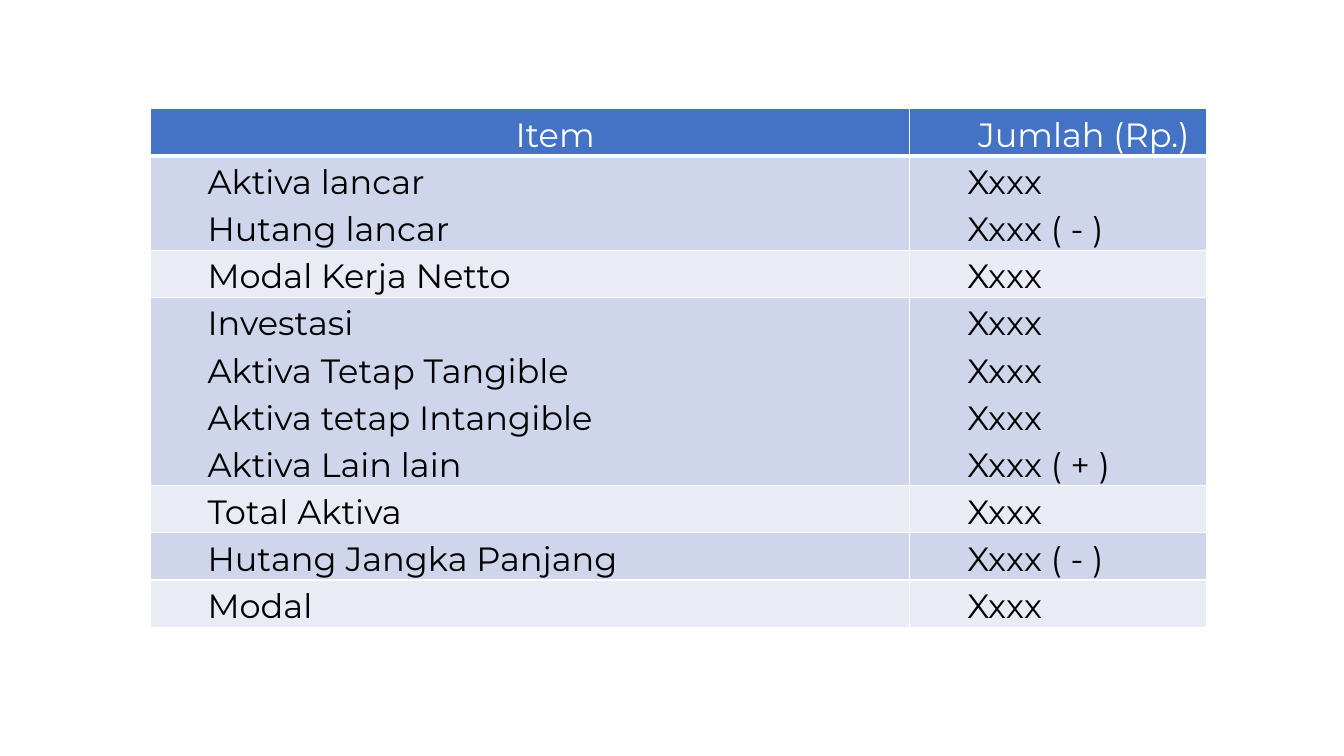
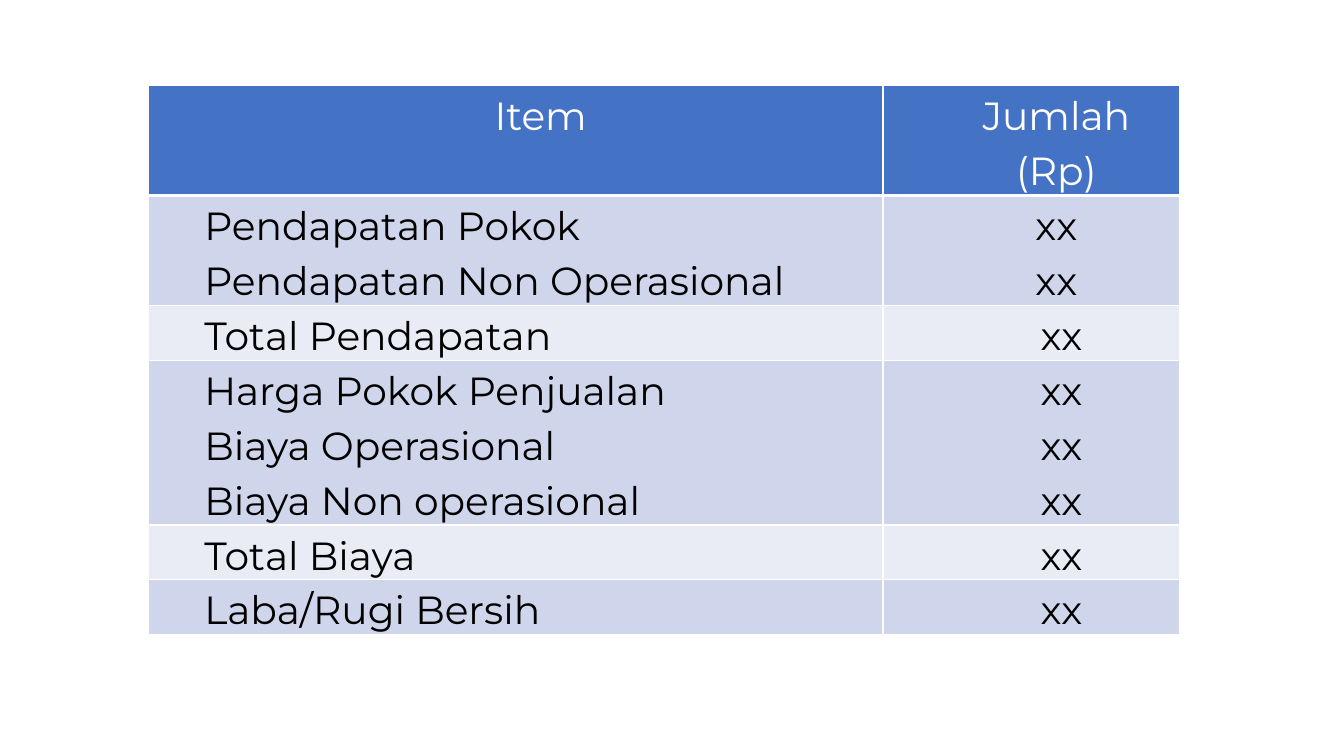
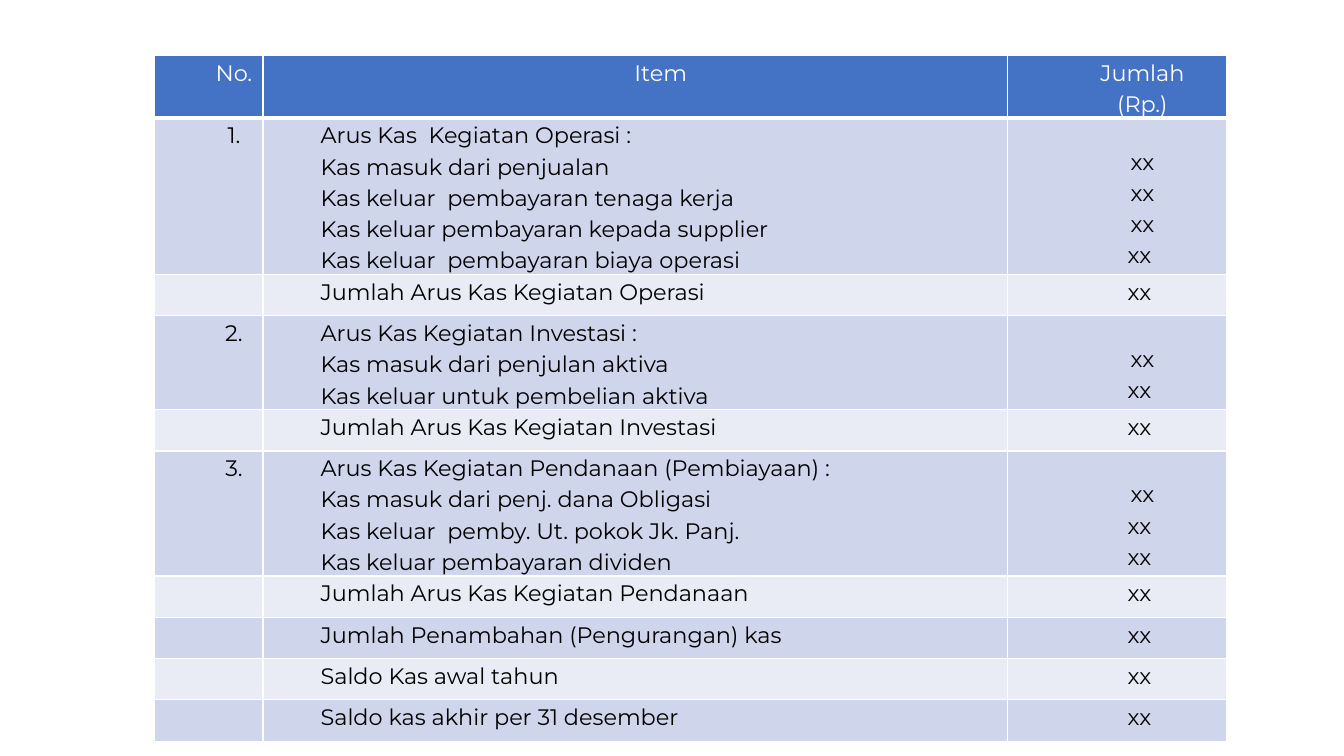
from dataclasses import dataclass

from lxml.etree import SubElement
from pptx import Presentation
from pptx.dml.color import RGBColor
from pptx.enum.text import PP_ALIGN
from pptx.oxml.ns import qn
from pptx.presentation import Presentation as Deck
from pptx.table import _Cell
from pptx.util import Cm, Pt

COLORS = {
    "header": "4472C4",
    "odd": "CFD5EA",
    "even": "E9EBF5",
    "border": "FFFFFF",
    "header_text": "FFFFFF",
    "text": "000000",
}
FONT = "Montserrat"
ROW_HEIGHT = 1.04
INDENT = 1.27
HEADING_LINE = 0.66
CENTER, JUSTIFY = PP_ALIGN.CENTER, PP_ALIGN.JUSTIFY


@dataclass(frozen=True)
class Statement:
    """One financial statement; lengths are in centimetres, lines in a cell are split by newlines."""
    left: float
    top: float
    widths: tuple[float, ...]
    aligns: tuple[PP_ALIGN, ...]
    size: int
    inset: float
    rows: tuple[tuple[str, ...], ...]


STATEMENTS = (
    Statement(3.78, 2.74, (19.15, 7.49), (JUSTIFY, JUSTIFY), 24, 0.18, (
        ("Item", "Jumlah (Rp.)"),
        ("Aktiva lancar\nHutang lancar", "Xxxx\nXxxx ( - )"),
        ("Modal Kerja Netto", "Xxxx"),
        ("Investasi\nAktiva Tetap Tangible\nAktiva tetap Intangible\nAktiva Lain lain",
         "Xxxx\nXxxx\nXxxx\nXxxx ( + )"),
        ("Total Aktiva", "Xxxx"),
        ("Hutang Jangka Panjang", "Xxxx ( - )"),
        ("Modal", "Xxxx"),
    )),
    Statement(3.73, 2.16, (18.52, 7.47), (JUSTIFY, CENTER), 28, 0.15, (
        ("Item", "Jumlah (Rp)"),
        ("Pendapatan Pokok\nPendapatan Non Operasional", "xx\nxx"),
        ("Total Pendapatan", " xx"),
        ("Harga Pokok Penjualan\nBiaya Operasional\nBiaya Non operasional", " xx\n xx\n xx"),
        ("Total Biaya", " xx"),
        ("Laba/Rugi Bersih", " xx"),
    )),
    Statement(3.89, 1.4, (2.74, 18.77, 5.51), (CENTER, JUSTIFY, CENTER), 16, 0.18, (
        ("No.", "Item", "Jumlah\n(Rp.)"),
        ("1.",
         "Arus Kas  Kegiatan Operasi :\nKas masuk dari penjualan\n"
         "Kas keluar  pembayaran tenaga kerja\nKas keluar pembayaran kepada supplier\n"
         "Kas keluar  pembayaran biaya operasi",
         "xx\nxx\nxx\nxx "),
        ("", "Jumlah Arus Kas Kegiatan Operasi", "xx "),
        ("2.",
         "Arus Kas Kegiatan Investasi :\nKas masuk dari penjulan aktiva\n"
         "Kas keluar untuk pembelian aktiva",
         "xx\nxx "),
        ("", "Jumlah Arus Kas Kegiatan Investasi", "xx "),
        ("3.",
         "Arus Kas Kegiatan Pendanaan (Pembiayaan) :\nKas masuk dari penj. dana Obligasi\n"
         "Kas keluar  pemby. Ut. pokok Jk. Panj.\nKas keluar pembayaran dividen",
         "xx\nxx \nxx "),
        ("", "Jumlah Arus Kas Kegiatan Pendanaan", "xx "),
        ("", "Jumlah Penambahan (Pengurangan) kas", "xx "),
        ("", "Saldo Kas awal tahun", "xx "),
        ("", "Saldo kas akhir per 31 desember", "xx "),
    )),
)


def set_borders(cell: _Cell, bottom: int) -> None:
    """Draw 1 pt borders with the given bottom width; call before the fill is set."""
    tc_pr = cell._tc.get_or_add_tcPr()
    for tag, width in (("a:lnL", 1), ("a:lnR", 1), ("a:lnT", 1), ("a:lnB", bottom)):
        ln = SubElement(tc_pr, qn(tag), w=str(Pt(width)))
        fill = SubElement(ln, qn("a:solidFill"))
        SubElement(fill, qn("a:srgbClr"), val=COLORS["border"])


def format_text(cell: _Cell, align: PP_ALIGN, size: int, color: str) -> None:
    for p in cell.text_frame.paragraphs:
        p.alignment = align
        p.line_spacing = 1.15
        p._p.get_or_add_pPr().set("marL", str(Cm(INDENT)))
        for r in p.runs:
            r.font.name = FONT
            r.font.size = Pt(size)
            r.font.bold = False
            r.font.color.rgb = RGBColor.from_string(COLORS[color])


def fill_row(cells: list[_Cell], texts: tuple[str, ...], index: int, st: Statement) -> None:
    is_header = index == 0
    band = "header" if is_header else "odd" if index % 2 else "even"
    for cell, text, align in zip(cells, texts, st.aligns):
        cell.text_frame.text = text
        cell.margin_left = cell.margin_right = Cm(st.inset)
        cell.margin_top = cell.margin_bottom = 0
        set_borders(cell, bottom=3 if is_header else 1)
        cell.fill.solid()
        cell.fill.fore_color.rgb = RGBColor.from_string(COLORS[band])
        format_text(cell, CENTER if is_header else align, st.size,
                    "header_text" if is_header else "text")
    *_, item, amount = texts
    if amount.count("\n") < item.count("\n"):
        cells[-1].margin_top = Cm(HEADING_LINE)


def add_statement(prs: Deck, st: Statement) -> None:
    s = prs.slides.add_slide(prs.slide_layouts[6])
    table = s.shapes.add_table(
        len(st.rows), len(st.widths), Cm(st.left), Cm(st.top),
        Cm(sum(st.widths)), Cm(ROW_HEIGHT * len(st.rows)),
    ).table
    for column, width in zip(table.columns, st.widths):
        column.width = Cm(width)
    for index, (row, texts) in enumerate(zip(table.rows, st.rows)):
        row.height = Cm(ROW_HEIGHT)
        fill_row(list(row.cells), texts, index, st)


def main() -> None:
    prs = Presentation()
    prs.slide_width, prs.slide_height = Cm(33.87), Cm(19.05)
    for st in STATEMENTS:
        add_statement(prs, st)
    prs.save("out.pptx")


if __name__ == "__main__":
    main()
